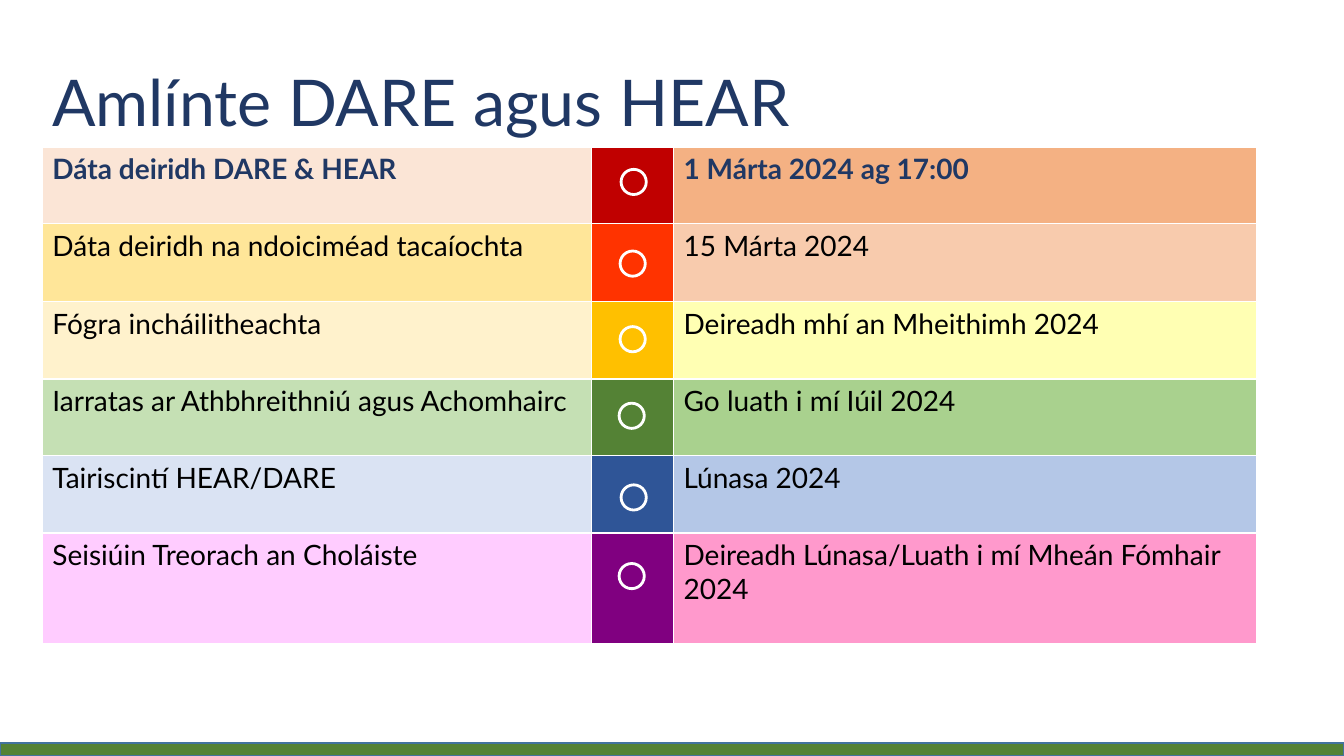
from typing import NamedTuple

from lxml import etree
from pptx import Presentation
from pptx import util as u
from pptx.dml.color import RGBColor
from pptx.enum import shapes, text
from pptx.oxml.ns import qn

PX = 9144  # one px is a hundredth of an inch
FONT = "Lato"
NAVY, BLACK, WHITE, GREEN = "203864", "000000", "FFFFFF", "548235"


class Step(NamedTuple):
    label: str
    date: str
    fills: tuple[str, str, str]
    high: int
    ring: tuple[int, int]
    ink: str = BLACK
    bold: bool = False
    alpha: int = 100  # opacity of the date cell, in percent


STEPS = [
    Step("Dáta deiridh DARE & HEAR", "1 Márta 2024 ag 17:00",
         ("FBE5D6", "C00000", "F4B183"), 76, (616, 168), NAVY, True),
    Step("Dáta deiridh na ndoiciméad tacaíochta", "15 Márta 2024",
         ("FFE699", "FF3300", "F8CBAD"), 77, (615, 249)),
    Step("Fógra incháilitheachta", "Deireadh mhí an Mheithimh 2024",
         ("FFF2CC", "FFC000", "FFFF99"), 77, (615, 324), alpha=74),
    Step("Iarratas ar Athbhreithniú agus Achomhairc", "Go luath i mí Iúil 2024",
         ("C5E0B4", GREEN, "A9D18E"), 76, (614, 400)),
    Step("Tairiscintí HEAR/DARE", "Lúnasa 2024",
         ("DAE3F3", "2F5597", "B4C7E7"), 77, (616, 481)),
    Step("Seisiúin Treorach an Choláiste",
         "Deireadh Lúnasa/Luath i mí Mheán Fómhair 2024",
         ("FFCCFF", "800080", "FF99CC"), 110, (614, 559)),
]
COLS = (545, 81, 578)


def px(*vals: int) -> list[u.Emu]:
    return [u.Emu(v * PX) for v in vals]


def rgb(code: str) -> RGBColor:
    return RGBColor.from_string(code)


def write(frame, words: str, *, size: int, ink: str, bold: bool = False,
          lead: float | None = None, before: int | None = None) -> None:
    para = frame.paragraphs[0]
    if lead is not None:
        para.line_spacing = lead
    if before is not None:
        para.space_before = u.Pt(before)
    run = para.add_run()
    run.text = words
    run.font.name, run.font.size, run.font.bold = FONT, u.Pt(size), bold
    run.font.color.rgb = rgb(ink)


def shape(slide, kind, box: tuple[int, int, int, int], *, line: str,
          width: int, fill: str | None = None) -> None:
    item = slide.shapes.add_shape(kind, *px(*box))
    item.shadow.inherit = False
    if fill:
        item.fill.solid()
        item.fill.fore_color.rgb = rgb(fill)
    else:
        item.fill.background()
    item.line.color.rgb = rgb(line)
    item.line.width = u.Pt(width)


def paint(cell, fill: str, alpha: int = 100) -> None:
    cell.fill.solid()
    cell.fill.fore_color.rgb = rgb(fill)
    props = cell._tc.get_or_add_tcPr()
    if alpha < 100:
        tone = props.find(".//" + qn("a:srgbClr"))
        etree.SubElement(tone, qn("a:alpha"), val=str(alpha * 1000))
    # White borders come before the fill
    for i, side in enumerate("LRTB"):
        edge = etree.Element(qn("a:ln" + side), w=str(u.Pt(1)))
        solid = etree.SubElement(edge, qn("a:solidFill"))
        etree.SubElement(solid, qn("a:srgbClr"), val=WHITE)
        props.insert(i, edge)


def grid(slide) -> None:
    high = sum(s.high for s in STEPS)
    table = slide.shapes.add_table(
        len(STEPS), len(COLS), *px(42, 146, sum(COLS), high)).table
    for col, wide in zip(table.columns, px(*COLS)):
        col.width = wide
    for row, step in zip(table.rows, STEPS):
        row.height = px(step.high)[0]
        left, mid, right = row.cells
        paint(left, step.fills[0])
        paint(mid, step.fills[1])
        paint(right, step.fills[2], step.alpha)
        for cell, words in ((left, step.label), (right, step.date)):
            write(cell.text_frame, words, size=20, ink=step.ink, bold=step.bold)


def main() -> None:
    deck = Presentation()
    deck.slide_width, deck.slide_height = px(1333, 750)
    slide = deck.slides.add_slide(deck.slide_layouts[6])

    # Title
    frame = slide.shapes.add_textbox(*px(42, 18, 772, 110)).text_frame
    frame.word_wrap = False
    frame.auto_size = text.MSO_AUTO_SIZE.SHAPE_TO_FIT_TEXT
    write(frame, "Amlínte DARE agus HEAR", size=46, ink=NAVY, lead=1.5, before=12)

    # Timeline with one ring per step
    grid(slide)
    for step in STEPS:
        shape(slide, shapes.MSO_SHAPE.OVAL, (*step.ring, 25, 25),
              line=WHITE, width=2)

    # Footer bar
    shape(slide, shapes.MSO_SHAPE.RECTANGLE, (0, 737, 1333, 13),
          line="43739E", width=1, fill=GREEN)

    deck.save("out.pptx")


if __name__ == "__main__":
    main()
